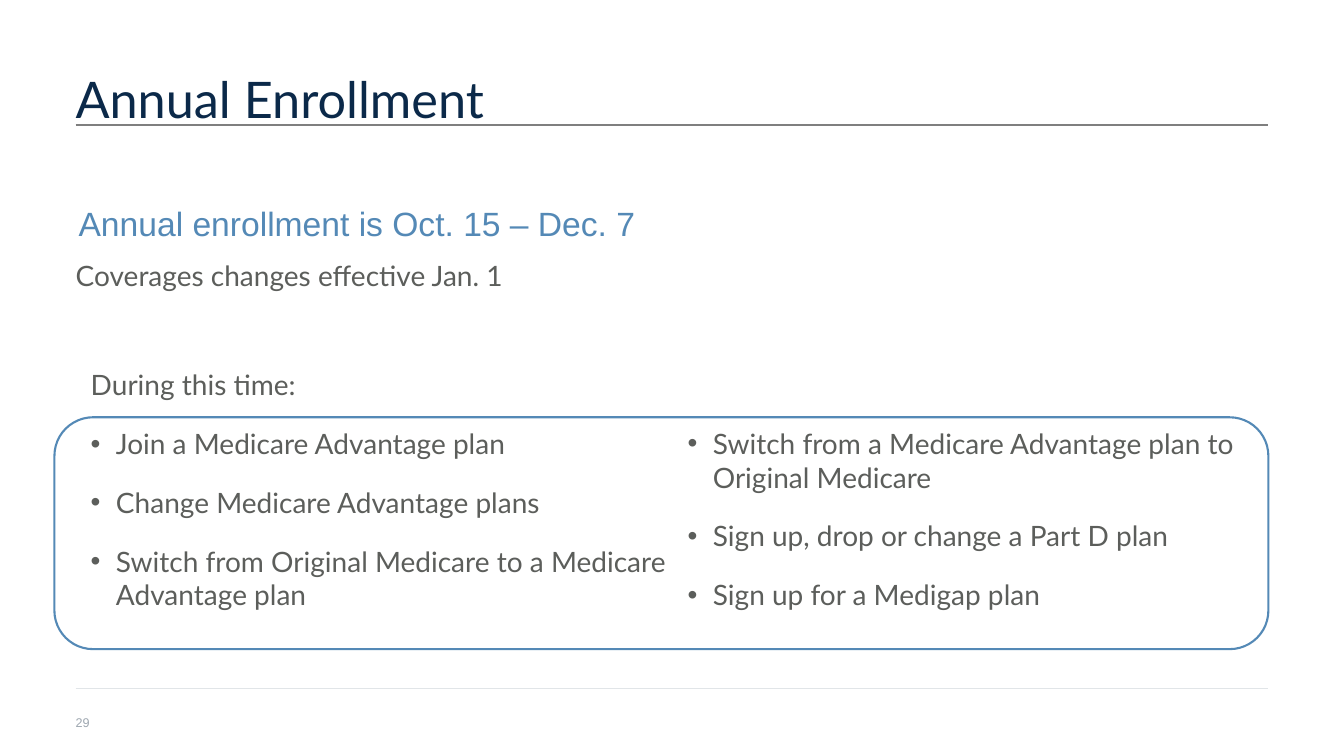
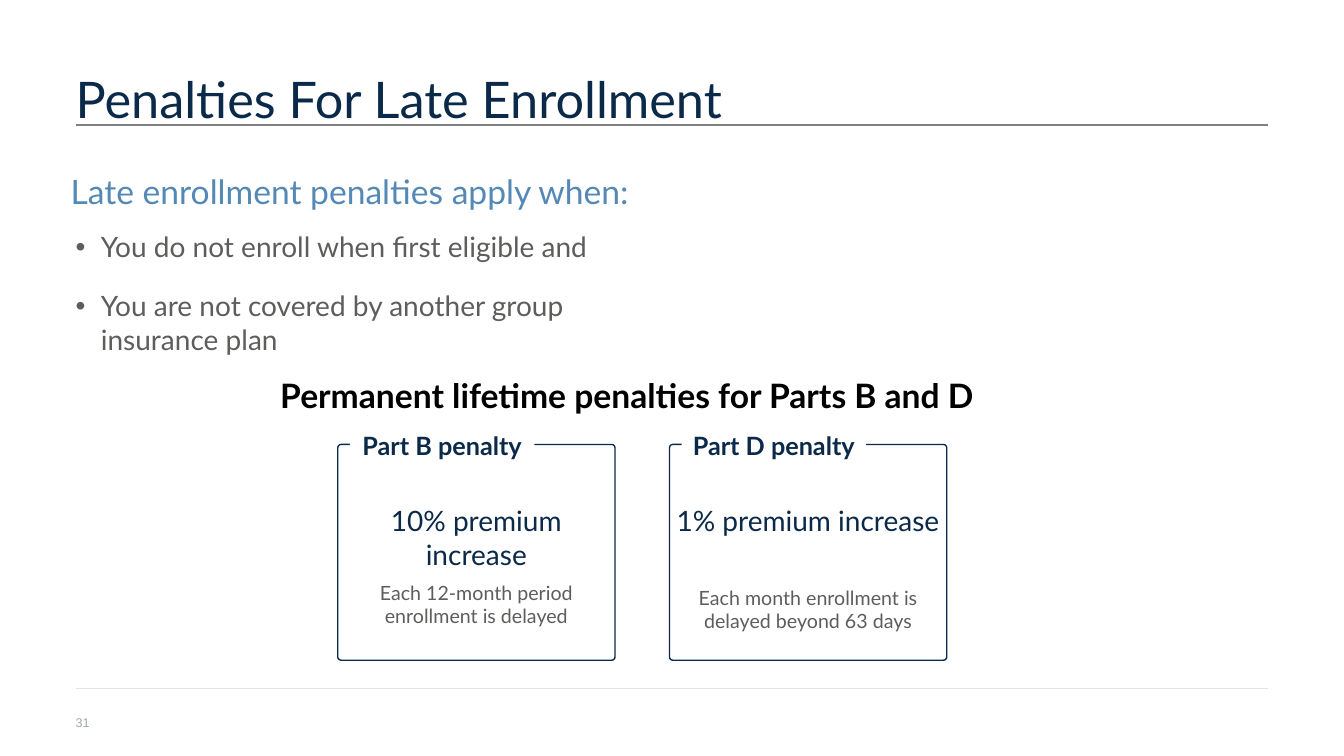
"""Builds two slides on Medicare enrollment dates and late penalties."""
from dataclasses import dataclass

import lxml.etree
import pptx
import pptx.dml.color
import pptx.enum.shapes
import pptx.enum.text
import pptx.oxml.ns
import pptx.util

Inches = pptx.util.Inches
Pt = pptx.util.Pt
ALIGN = pptx.enum.text.PP_ALIGN
ANCHOR = pptx.enum.text.MSO_ANCHOR
SHAPE = pptx.enum.shapes.MSO_SHAPE


@dataclass(frozen=True)
class Style:
    """Font, size, colour and weight of a kind of text."""
    size: float
    color: str
    font: str = "Lato"
    bold: bool = False


class Theme:
    """Colours, type styles and margins shared by the slides."""
    navy, blue, gray, white = "0B2949", "5489B6", "5C5E5B", "FFFFFF"
    title_rule, footer_rule = "7F7F7F", "E1E5E8"
    title = Style(36, navy)
    date = Style(24, blue, "Arial")
    heading = Style(24, blue)
    banner = Style(24, "000000", bold=True)
    body = Style(20, gray)
    label = Style(18, navy, bold=True)
    amount = Style(20, navy)
    note = Style(14, gray)
    number = Style(9, "9EA7B0", "Arial")
    left, right = 0.75, 12.58
    list_gap = 18
    bullet_indent = 0.25


def rgb(value):
    """Turn a hex string into a colour."""
    return pptx.dml.color.RGBColor.from_string(value)


def set_bullet(para, bulleted):
    """Give a paragraph a hanging bullet, or clear it."""
    properties = para._p.get_or_add_pPr()
    indent = Inches(Theme.bullet_indent) if bulleted else 0
    properties.set("marL", str(indent))
    properties.set("indent", str(-indent))
    qn = pptx.oxml.ns.qn
    if bulleted:
        lxml.etree.SubElement(properties, qn("a:buFont")).set("typeface", "Arial")
        lxml.etree.SubElement(properties, qn("a:buChar")).set("char", "•")
    else:
        lxml.etree.SubElement(properties, qn("a:buNone"))


def write(shape, lines, style, align=ALIGN.LEFT, anchor=ANCHOR.TOP, wrap=True, plain=0, gap=0):
    """Fill a shape with paragraphs; those from index plain on are bulleted if gap is set."""
    frame = shape.text_frame
    frame.margin_left = frame.margin_right = frame.margin_top = frame.margin_bottom = 0
    frame.auto_size = pptx.enum.text.MSO_AUTO_SIZE.NONE
    frame.word_wrap = wrap
    frame.vertical_anchor = anchor
    for index, line in enumerate(lines):
        para = frame.add_paragraph() if index else frame.paragraphs[0]
        set_bullet(para, bool(gap) and index >= plain)
        para.text = line
        para.alignment = align
        para.space_before = Pt(gap if index else 0)
        para.font.name = style.font
        para.font.size = Pt(style.size)
        para.font.bold = style.bold
        para.font.color.rgb = rgb(style.color)
    return frame


def place(shape, left, top, width, height):
    """Move and size a placeholder."""
    shape.left, shape.top = Inches(left), Inches(top)
    shape.width, shape.height = Inches(width), Inches(height)


def add_text(slide, box, lines, style, **options):
    """Add a text box at (left, top, width, height)."""
    shape = slide.shapes.add_textbox(*map(Inches, box))
    write(shape, lines, style, **options)
    return shape


def add_rule(slide, top, color, width):
    """Draw a horizontal line between the margins."""
    line = slide.shapes.add_connector(
        pptx.enum.shapes.MSO_CONNECTOR.STRAIGHT,
        Inches(Theme.left), Inches(top), Inches(Theme.right), Inches(top))
    line.line.color.rgb = rgb(color)
    line.line.width = Pt(width)
    lxml.etree.SubElement(line._element.spPr, pptx.oxml.ns.qn("a:effectLst"))


def add_outline(slide, box, color, width):
    """Add an unfilled rounded rectangle."""
    shape = slide.shapes.add_shape(SHAPE.ROUNDED_RECTANGLE, *map(Inches, box))
    shape.shadow.inherit = False
    shape.fill.background()
    shape.line.color.rgb = rgb(color)
    shape.line.width = Pt(width)
    return shape


def add_page(deck, title, number):
    """Add a slide with title, rules and page number."""
    slide = deck.slides.add_slide(deck.slide_layouts.get_by_name("Title and Content"))
    width = Theme.right - Theme.left
    place(slide.shapes.title, Theme.left, 0.74, width, 1)
    frame = write(slide.shapes.title, [title], Theme.title)
    frame.paragraphs[0].line_spacing = 0.9
    add_rule(slide, 1.24, Theme.title_rule, 1)
    add_rule(slide, 6.83, Theme.footer_rule, 0.5)
    add_text(slide, (Theme.left, 7.09, 0.3, 0.15), [number], Theme.number, anchor=ANCHOR.BOTTOM)
    return slide


def add_penalty(slide, left, label, amount, amount_width, note, note_top):
    """Add an outlined panel with a label set into its top edge."""
    width = 2.75
    panel = add_outline(slide, (left, 4.41, width, 2.14), Theme.navy, 1)
    panel.adjustments[0] = 0.015
    tab = add_text(slide, (left + 0.12, 4.27, 1.83, 0.26), [label], Theme.label, align=ALIGN.CENTER)
    tab.fill.solid()
    tab.fill.fore_color.rgb = rgb(Theme.white)
    for text, style, top, text_width, anchor in (
            (amount, Theme.amount, 5, amount_width, ANCHOR.TOP),
            (note, Theme.note, note_top, 2.61, ANCHOR.MIDDLE)):
        box = (left + (width - text_width) / 2, top, text_width, 0.47)
        add_text(slide, box, [text], style, align=ALIGN.CENTER, anchor=anchor)


def build_enrollment(deck):
    """Build the annual enrollment slide."""
    slide = add_page(deck, "Annual Enrollment", "29")
    body = slide.placeholders[1]
    place(body, Theme.left, 2.56, 4.72, 0.31)
    write(body, ["Coverages changes effective Jan. 1"], Theme.body)
    add_text(slide, (Theme.left, 2.01, 5.58, 0.4), ["Annual enrollment is Oct. 15 – Dec. 7"],
             Theme.date, align=ALIGN.CENTER, anchor=ANCHOR.MIDDLE, wrap=False)
    add_outline(slide, (0.54, 4.14, 12.04, 2.3), Theme.blue, 1.5)
    column = 5.92
    add_text(slide, (0.9, 3.65, column, 2.7), [
        "During this time:",
        "Join a Medicare Advantage plan",
        "Change Medicare Advantage plans",
        "Switch from Original Medicare to a Medicare Advantage plan",
    ], Theme.body, plain=1, gap=Theme.list_gap)
    add_text(slide, (0.9 + column, 4.23, column, 2.12), [
        "Switch from a Medicare Advantage plan to Original Medicare",
        "Sign up, drop or change a Part D plan",
        "Sign up for a Medigap plan",
    ], Theme.body, gap=Theme.list_gap)


def build_penalties(deck):
    """Build the late enrollment penalties slide."""
    slide = add_page(deck, "Penalties For Late Enrollment", "31")
    body = slide.placeholders[1]
    place(body, Theme.left, 2.28, 6.01, 1.48)
    write(body, [
        "You do not enroll when first eligible and",
        "You are not covered by another group insurance plan",
    ], Theme.body, gap=Theme.list_gap)
    add_text(slide, (0.7, 1.7, 5.72, 0.4), ["Late enrollment penalties apply when:"], Theme.heading)
    add_text(slide, (2.78, 3.72, 8.64, 0.4),
             ["Permanent lifetime penalties for Parts B and D"], Theme.banner)
    add_penalty(slide, 3.35, "Part B penalty", "10% premium increase", 2.13,
                "Each 12-month period enrollment is delayed", 5.76)
    add_penalty(slide, 6.64, "Part D penalty", "1% premium increase", 2.63,
                "Each month enrollment is delayed beyond 63 days", 5.81)


def main():
    """Build and save the deck."""
    deck = pptx.Presentation()
    deck.slide_width, deck.slide_height = Inches(13.33), Inches(7.5)
    build_enrollment(deck)
    build_penalties(deck)
    deck.save("out.pptx")


if __name__ == "__main__":
    main()
